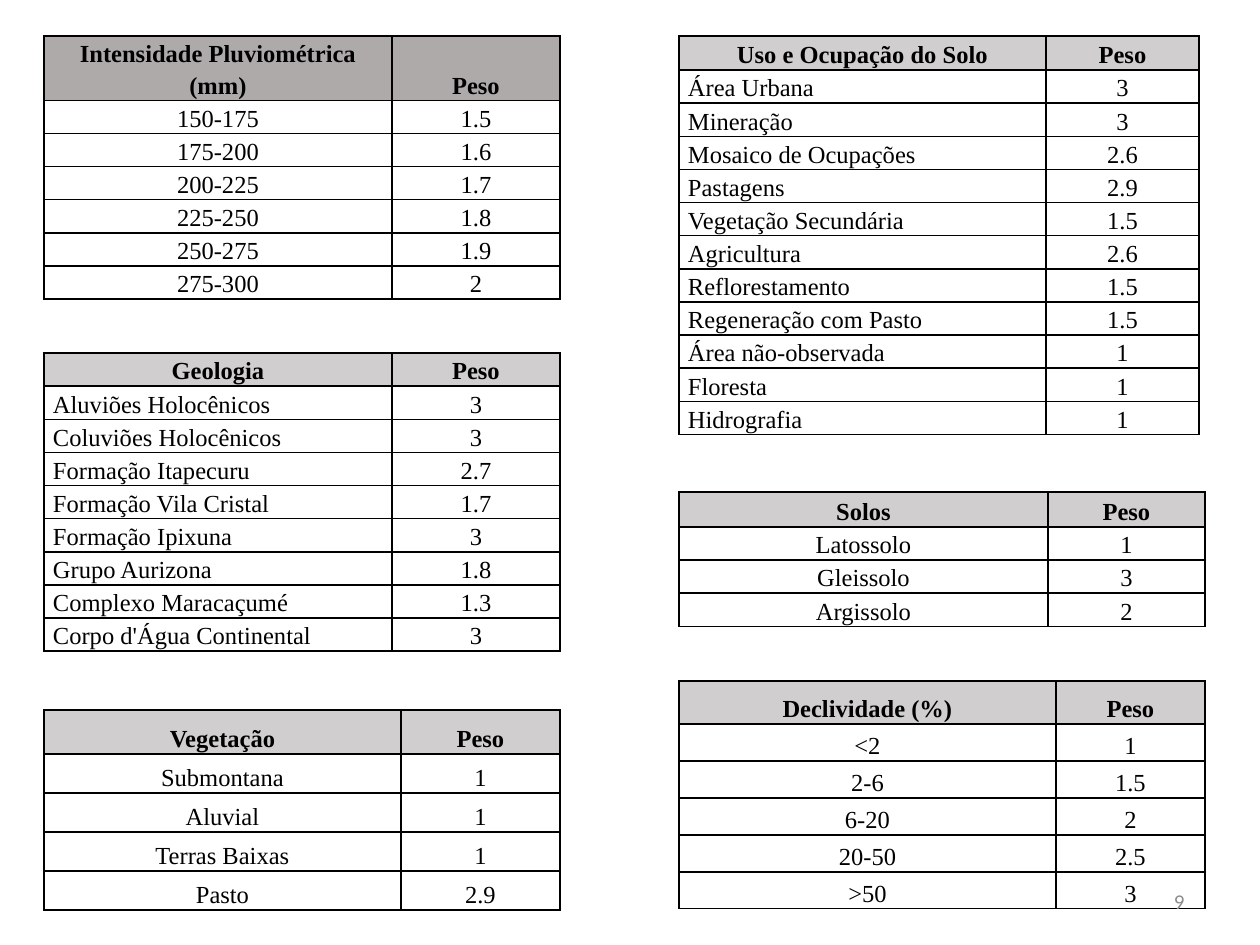
"""Builds a slide of six weight tables for environmental factors."""
from lxml import etree
from pptx import Presentation
from pptx.dml.color import RGBColor
from pptx.enum.text import MSO_ANCHOR, PP_ALIGN
from pptx.oxml.ns import qn
from pptx.util import Pt

PX = 914400 // 126
LEFT, CENTER, RIGHT = PP_ALIGN.LEFT, PP_ALIGN.CENTER, PP_ALIGN.RIGHT
BOTTOM, MIDDLE = MSO_ANCHOR.BOTTOM, MSO_ANCHOR.MIDDLE
BLACK = RGBColor(0x00, 0x00, 0x00)
PALE = RGBColor(0xD0, 0xCE, 0xCE)
DARK = RGBColor(0xAE, 0xAA, 0xAA)
GRAY = RGBColor(0x8C, 0x8C, 0x8C)

LEFT_X, RIGHT_X = 44, 679
WEIGHT = "Peso"
FACTORS = [
    {"title": "Intensidade Pluviométrica (mm)", "at": (LEFT_X, 36), "height": 273,
     "columns": (348, 168), "rows": (28, 28), "align": CENTER, "header": DARK,
     "weights": [("150-175", "1.5"), ("175-200", "1.6"), ("200-225", "1.7"),
                 ("225-250", "1.8"), ("250-275", "1.9"), ("275-300", "2")]},
    {"title": "Vegetação", "at": (LEFT_X, 710), "height": 202,
     "columns": (357, 159), "rows": (44, 39), "align": CENTER, "header": PALE,
     "weights": [("Submontana", "1"), ("Aluvial", "1"),
                 ("Terras Baixas", "1"), ("Pasto", "2.9")]},
    {"title": "Declividade (%)", "at": (RIGHT_X, 681), "height": 228,
     "columns": (377, 149), "rows": (43, 37), "align": CENTER, "header": PALE,
     "weights": [("<2", "1"), ("2-6", "1.5"), ("6-20", "2"),
                 ("20-50", "2.5"), (">50", "3")]},
    {"title": "Geologia", "at": (LEFT_X, 353), "height": 309,
     "columns": (348, 168), "rows": (28, 28), "align": LEFT, "header": PALE,
     "weights": [("Aluviões Holocênicos", "3"), ("Coluviões Holocênicos", "3"),
                 ("Formação Itapecuru", "2.7"), ("Formação Vila Cristal", "1.7"),
                 ("Formação Ipixuna", "3"), ("Grupo Aurizona", "1.8"),
                 ("Complexo Maracaçumé", "1.3"), ("Corpo d'Água Continental", "3")]},
    {"title": "Solos", "at": (RIGHT_X, 492), "height": 139,
     "columns": (369, 157), "rows": (35, 28), "align": CENTER, "header": PALE,
     "weights": [("Latossolo", "1"), ("Gleissolo", "3"), ("Argissolo", "2")]},
    {"title": "Uso e Ocupação do Solo", "at": (RIGHT_X, 36), "height": 412,
     "columns": (367, 153), "rows": (34, 28), "align": LEFT, "header": PALE,
     "weights": [("Área Urbana", "3"), ("Mineração", "3"),
                 ("Mosaico de Ocupações", "2.6"), ("Pastagens", "2.9"),
                 ("Vegetação Secundária", "1.5"), ("Agricultura", "2.6"),
                 ("Reflorestamento", "1.5"), ("Regeneração com Pasto", "1.5"),
                 ("Área não-observada", "1"), ("Floresta", "1"),
                 ("Hidrografia", "1")]},
]
PAGE_NUMBER = "9"
CELL_FORMAT = {"vertical_anchor": BOTTOM, "margin_left": 9 * PX,
               "margin_right": 9 * PX, "margin_top": PX, "margin_bottom": PX}


def write(paragraph, text, align, color, **font_format):
    """Put one formatted run in a paragraph."""
    paragraph.alignment = align
    run = paragraph.add_run()
    run.text = text
    run.font.color.rgb = color
    for name, value in font_format.items():
        setattr(run.font, name, value)


def add_borders(cell):
    """Draw a thin black line on each side of a cell."""
    properties = cell._tc.get_or_add_tcPr()
    for side in ("a:lnL", "a:lnR", "a:lnT", "a:lnB"):
        line = etree.SubElement(properties, qn(side), w=str(Pt(1)))
        fill = etree.SubElement(line, qn("a:solidFill"))
        etree.SubElement(fill, qn("a:srgbClr"), val=str(BLACK))


def add_factor(slide, factor):
    """Add the weight table of one factor."""
    entries = [(factor["title"], WEIGHT)] + factor["weights"]
    left, top = factor["at"]
    frame = slide.shapes.add_table(
        len(entries), 2, left * PX, top * PX,
        sum(factor["columns"]) * PX, factor["height"] * PX)
    table = frame.table
    table.first_row = table.horz_banding = False
    for column, width in zip(table.columns, factor["columns"]):
        column.width = width * PX
    header_height, body_height = factor["rows"]
    for r, entry in enumerate(entries):
        is_header = r == 0
        table.rows[r].height = (header_height if is_header else body_height) * PX
        for c, text in enumerate(entry):
            cell = table.cell(r, c)
            for name, value in CELL_FORMAT.items():
                setattr(cell, name, value)
            add_borders(cell)
            if is_header:
                cell.fill.solid()
                cell.fill.fore_color.rgb = factor["header"]
            else:
                cell.fill.background()
            paragraph = cell.text_frame.paragraphs[0]
            paragraph.line_spacing = 1.15
            align = CENTER if is_header or c == 1 else factor["align"]
            write(paragraph, text, align, BLACK, size=Pt(14),
                  name="Times New Roman", bold=is_header)
    frame.height = factor["height"] * PX


def main():
    """Build and save the slide."""
    deck = Presentation()
    deck.slide_width, deck.slide_height = 1260 * PX, 945 * PX
    slide = deck.slides.add_slide(deck.slide_layouts[6])
    for factor in FACTORS:
        add_factor(slide, factor)
    page = slide.shapes.add_textbox(903 * PX, 876 * PX, 294 * PX, 50 * PX).text_frame
    page.word_wrap = True
    page.vertical_anchor = MIDDLE
    write(page.paragraphs[0], PAGE_NUMBER, RIGHT, GRAY, size=Pt(12), name="Calibri")
    deck.save("out.pptx")


if __name__ == "__main__":
    main()
